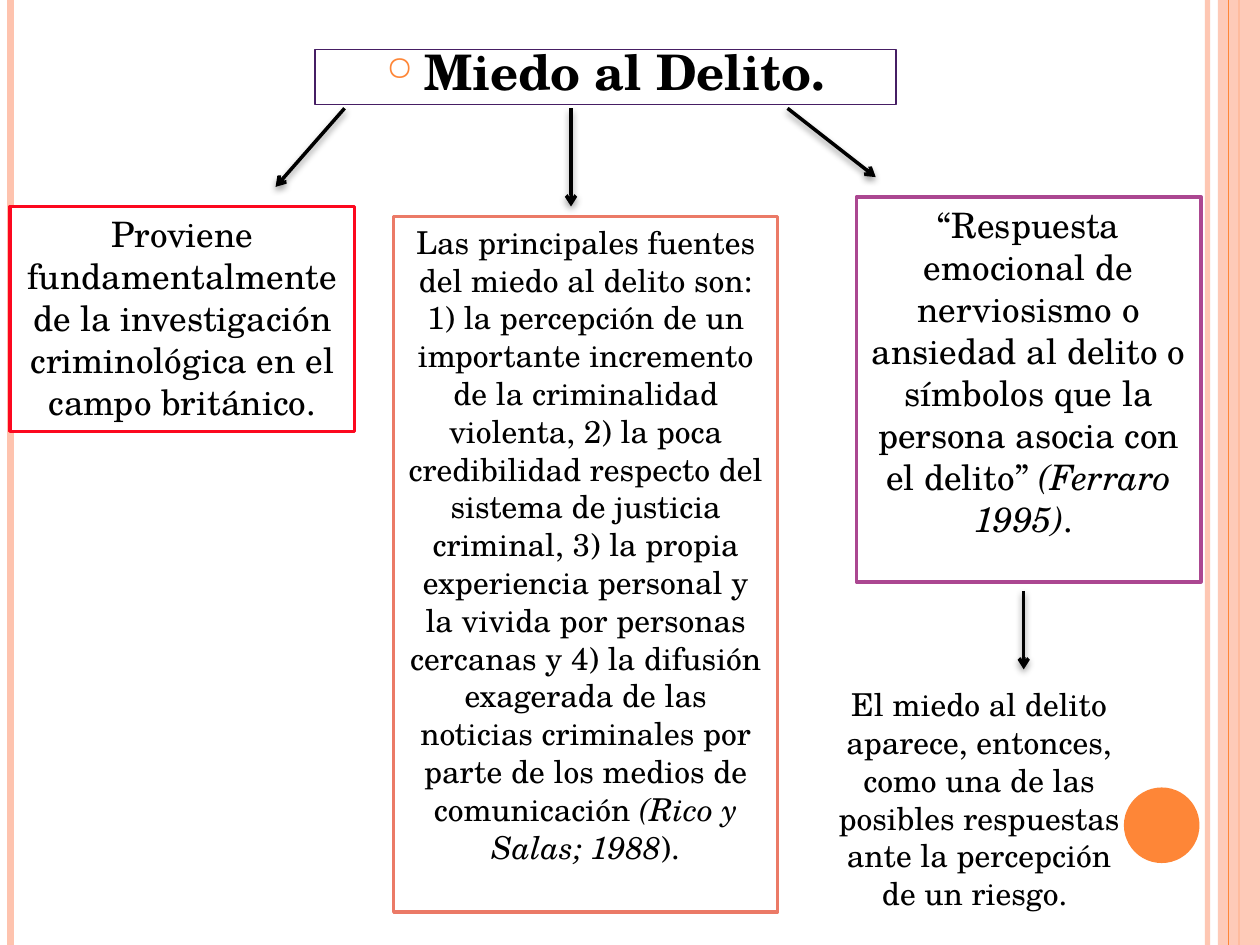
from lxml.etree import SubElement
from pptx import Presentation
from pptx.dml.color import RGBColor
from pptx.enum.shapes import MSO_CONNECTOR as Link, MSO_SHAPE as Shape
from pptx.enum.text import MSO_ANCHOR as Anchor, MSO_AUTO_SIZE as AutoSize, PP_ALIGN as Align
from pptx.oxml.ns import qn
from pptx.util import Pt

FONT = "TeX Gyre Schola"
BLACK = RGBColor(0x00, 0x00, 0x00)
WHITE = RGBColor(0xFF, 0xFF, 0xFF)
ORANGE = RGBColor(0xFE, 0x86, 0x37)
PEACH = RGBColor(0xFE, 0xC3, 0xAE)
INDIGO = RGBColor(0x46, 0x1E, 0x64)
RED = RGBColor(0xFC, 0x08, 0x1F)
PURPLE = RGBColor(0xAB, 0x47, 0x91)
CORAL = RGBColor(0xEB, 0x7A, 0x67)

ORIGIN = ("Proviene fundamentalmente de la investigación criminológica "
          "en el campo británico.")
SOURCES = ("Las principales fuentes del miedo al delito son: 1) la percepción de un "
           "importante incremento de la criminalidad violenta, 2) la poca credibilidad "
           "respecto del sistema de justicia criminal, 3) la propia experiencia personal "
           "y la vivida por personas cercanas y 4) la difusión exagerada de las noticias "
           "criminales por parte de los medios de comunicación ")
RESPONSE = ("“Respuesta emocional de nerviosismo o ansiedad al delito o símbolos "
            "que la persona asocia con el delito”")
OUTCOME = ("El miedo al delito aparece, entonces, como una de las posibles respuestas "
           "ante la percepción de un riesgo. ")


def add_child(parent, tag, **attributes):
    """Append an XML child with the given attributes."""
    return SubElement(parent, qn(tag), {name: str(value) for name, value in attributes.items()})


def set_opacity(properties, percent):
    """Make the solid colour of a fill or line partly transparent."""
    color = properties.find(qn("a:solidFill")).find(qn("a:srgbClr"))
    add_child(color, "a:alpha", val=percent * 1000)


def add_line(page, start, end, color, width):
    """Draw a straight line without a theme effect."""
    line = page.shapes.add_connector(Link.STRAIGHT, *map(Pt, start + end))
    line.line.color.rgb = color
    line.line.width = Pt(width)
    add_child(line.element.spPr, "a:effectLst")
    return line


def add_arrow(page, start, end):
    """Draw a black arrow with a soft shadow below it."""
    properties = add_line(page, start, end, BLACK, 2).element.spPr
    add_child(properties.find(qn("a:ln")), "a:tailEnd", type="arrow")
    shadow = add_child(properties.find(qn("a:effectLst")), "a:outerShdw",
                       blurRad=Pt(4), dist=Pt(2), dir=5400000, rotWithShape=0)
    add_child(add_child(shadow, "a:srgbClr", val=BLACK), "a:alpha", val=40000)


def add_solid(page, kind, box, color):
    """Draw a filled shape without outline."""
    shape = page.shapes.add_shape(kind, *map(Pt, box))
    shape.shadow.inherit = False
    shape.fill.solid()
    shape.fill.fore_color.rgb = color
    shape.line.fill.background()
    return shape


def add_margins(page, box):
    """Draw the stripes and the disc along the edges of the box."""
    left, top, width, height = box
    right, bottom = left + width, top + height

    def stripe(x, color, weight):
        """Draw one stripe of full height."""
        return add_line(page, (x, top), (x, bottom), color, weight)

    inner = stripe(right - 30, PEACH, 3)
    set_opacity(inner.element.spPr.find(qn("a:ln")), 93)
    stripe(left + 6, PEACH, 4.5)
    stripe(right - 12, ORANGE, 1.5)
    band = add_solid(page, Shape.RECTANGLE, (right - 24, top, 24, height), PEACH)
    set_opacity(band.element.spPr, 87)
    stripe(right - 18, ORANGE, 0.75)
    add_solid(page, Shape.OVAL, (right - 77.76, bottom - 90, 43.2, 43.2), ORANGE)


def add_span(para, text, size, bold=False, italic=False):
    """Add one formatted run to the paragraph."""
    span = para.add_run()
    span.text = text
    font = span.font
    font.name, font.size = FONT, Pt(size)
    font.bold, font.italic = bold, italic
    font.color.rgb = BLACK


def place_title(page, box, text):
    """Place the outlined title with its ring bullet."""
    title = page.shapes.title
    title.left, title.top, title.width, title.height = map(Pt, box)
    title.line.color.rgb = INDIGO
    title.line.width = Pt(0.75)
    frame = title.text_frame
    frame.auto_size = AutoSize.NONE
    frame.vertical_anchor = Anchor.MIDDLE
    para = frame.paragraphs[0]
    para.alignment = Align.CENTER
    para.line_spacing = 0.8
    para.space_before = Pt(6)
    add_span(para, text, 28, bold=True)
    properties = para._p.get_or_add_pPr()
    properties.set("marL", str(Pt(21.6)))
    properties.set("indent", str(Pt(-21.6)))
    add_child(add_child(properties, "a:buClr"), "a:srgbClr", val=ORANGE)
    add_child(properties, "a:buSzPct", val=70000)
    add_child(properties, "a:buChar", char="○")


def add_note(page, box, size, spans, outline=None):
    """Place centred text, in a white frame when an outline colour is given."""
    if outline is None:
        note = page.shapes.add_textbox(*map(Pt, box))
    else:
        note = add_solid(page, Shape.RECTANGLE, box, WHITE)
        note.line.color.rgb = outline
        note.line.width = Pt(2)
    frame = note.text_frame
    frame.word_wrap = True
    frame.auto_size = AutoSize.NONE
    frame.vertical_anchor = Anchor.TOP
    para = frame.paragraphs[0]
    para.alignment = Align.CENTER
    for text, italic in spans:
        add_span(para, text, size, italic=italic)


def main():
    """Build and save the slide."""
    deck = Presentation()
    deck.slide_width, deck.slide_height = Pt(720), Pt(540)
    page = deck.slides.add_slide(deck.slide_layouts[5])
    add_margins(page, (0, 0, 720, 540))
    place_title(page, (180, 28.1, 332, 31.5), "Miedo al Delito.")
    add_note(page, (466.5, 388, 186, 138), 18, [(OUTCOME, False)])
    add_note(page, (5.8, 118, 196.9, 128.5), 20, [(ORIGIN, False)], RED)
    add_note(page, (489.4, 112.5, 196.9, 220), 20,
             [(RESPONSE, False), (" (Ferraro 1995)", True), (". ", False)], PURPLE)
    add_note(page, (225, 123.8, 219.4, 397.4), 18,
             [(SOURCES, False), ("(Rico y Salas; 1988", True), (").", False)], CORAL)
    for start, end in (((196.9, 61.9), (157.5, 106.8)),
                       ((326.3, 61.9), (326.3, 118)),
                       ((450, 61.9), (500.4, 101.2)),
                       ((585, 337.6), (585, 382.5))):
        add_arrow(page, start, end)
    deck.save("out.pptx")


if __name__ == "__main__":
    main()
